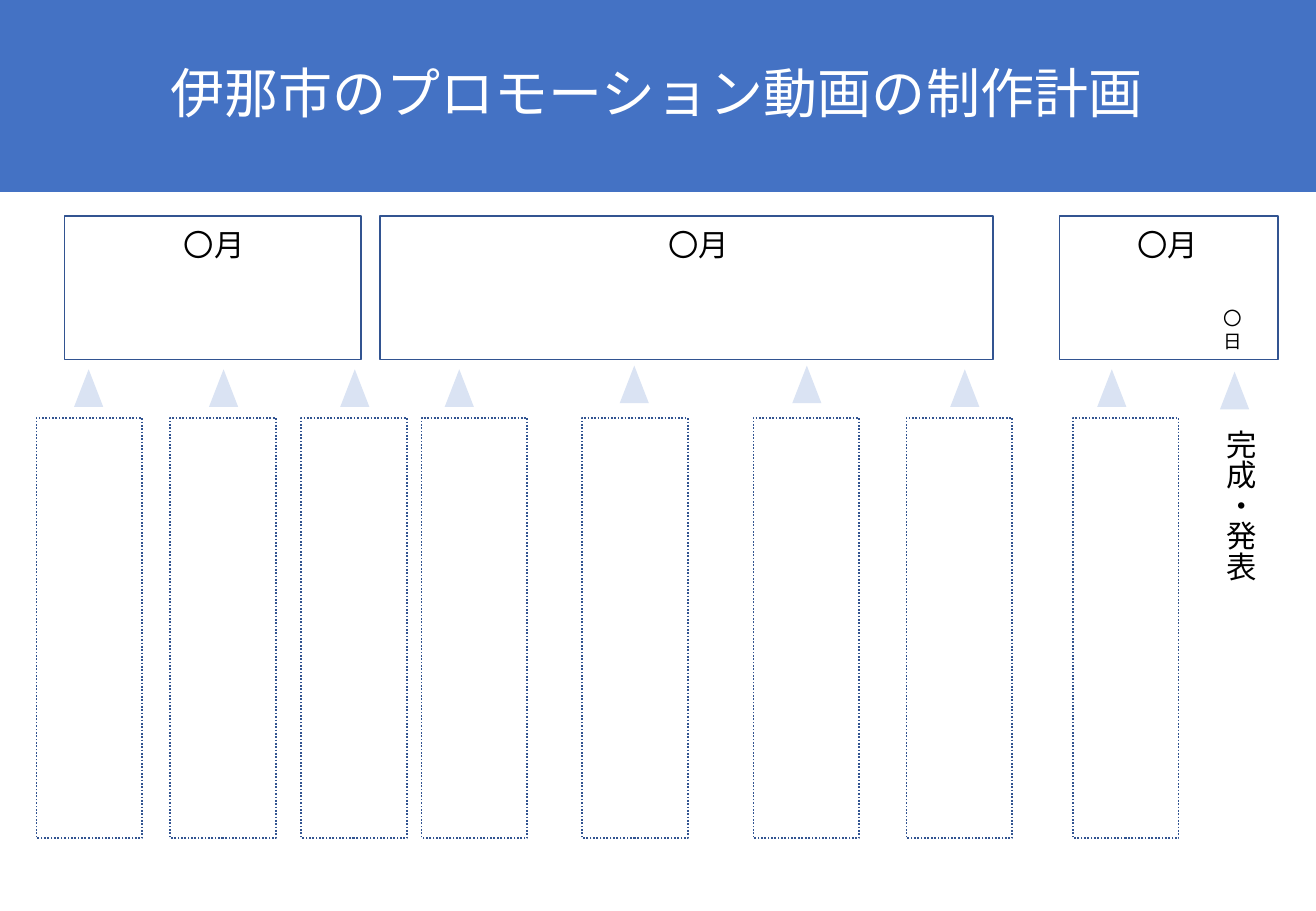
"""Build the one-page production schedule for a city promotion video."""
from dataclasses import dataclass

from lxml.etree import SubElement
from pptx import Presentation
from pptx.dml.color import RGBColor
from pptx.enum.dml import MSO_LINE
from pptx.enum.lang import MSO_LANGUAGE_ID
from pptx.enum.shapes import MSO_SHAPE
from pptx.enum.text import MSO_ANCHOR, MSO_AUTO_SIZE, PP_ALIGN
from pptx.oxml.ns import qn
from pptx.util import Emu, Pt


@dataclass(frozen=True)
class Theme:
    banner: str = "4472C4"
    outline: str = "325491"
    arrow: str = "DAE3F3"
    ink: str = "000000"
    paper: str = "FFFFFF"
    latin: str = "Calibri"
    japanese: str = "Noto Sans CJK JP"
    title_size: int = 32
    label_size: int = 18
    day_size: int = 11
    line_width: int = 1


THEME = Theme()
EMU_PER_PX = 9144
PAGE_WIDTH, PAGE_HEIGHT = 1083, 750
MONTH_TOP, MONTH_HEIGHT = 178, 118
STEP_TOP, STEP_WIDTH, STEP_HEIGHT = 344, 87, 346
ARROW_WIDTH, ARROW_HEIGHT = 24, 31

MONTHS = [(53, 244), (313, 504), (872, 180)]
STEP_LEFTS = [30, 140, 248, 347, 479, 620, 746, 883]
ARROWS = [
    (61, 304), (172, 304), (280, 304), (366, 304), (510, 301),
    (652, 301), (782, 304), (903, 304), (1004, 306),
]
MONTH_LABELS = [(136, 106, " 〇月"), (926, 71, "〇月"), (540, 71, "〇月")]


def px(*lengths):
    return [Emu(length * EMU_PER_PX) for length in lengths]


def add_block(page, kind, bounds, fill=None, line=None, dash=None):
    block = page.shapes.add_shape(kind, *px(*bounds))
    block.shadow.inherit = False
    if fill:
        block.fill.solid()
        block.fill.fore_color.rgb = RGBColor.from_string(fill)
    else:
        block.fill.background()
    if line:
        block.line.color.rgb = RGBColor.from_string(line)
        block.line.width = Pt(THEME.line_width)
        if dash:
            block.line.dash_style = dash
    else:
        block.line.fill.background()
    return block


def write_text(box, text, size=THEME.label_size, color=THEME.ink,
               font=THEME.latin, align=PP_ALIGN.LEFT, spacing=None):
    para = box.text_frame.paragraphs[0]
    para.alignment = align
    if spacing:
        para.line_spacing = spacing
    span = para.add_run()
    span.text = text
    span.font.size = Pt(size)
    span.font.color.rgb = RGBColor.from_string(color)
    span.font.name = font
    span.font.language_id = MSO_LANGUAGE_ID.JAPANESE
    SubElement(span.font._element, qn("a:ea"), typeface=THEME.japanese)


def add_label(page, bounds, text, wrap=False, vertical=False, **text_format):
    box = page.shapes.add_textbox(*px(*bounds))
    box.text_frame.word_wrap = wrap
    box.text_frame.auto_size = MSO_AUTO_SIZE.SHAPE_TO_FIT_TEXT
    if vertical:
        box.element.txBody.bodyPr.set("vert", "eaVert")
    write_text(box, text, **text_format)


def add_title(page, text):
    banner = add_block(page, MSO_SHAPE.RECTANGLE, (-2, 0, PAGE_WIDTH + 2, 158),
                       fill=THEME.banner)
    banner.text_frame.word_wrap = True
    banner.text_frame.vertical_anchor = MSO_ANCHOR.MIDDLE
    write_text(banner, text, size=THEME.title_size, color=THEME.paper,
               font=THEME.japanese, align=PP_ALIGN.CENTER, spacing=0.9)


def add_month(page, left, width):
    add_block(page, MSO_SHAPE.RECTANGLE, (left, MONTH_TOP, width, MONTH_HEIGHT),
              line=THEME.outline)


def add_arrow(page, left, top):
    add_block(page, MSO_SHAPE.ISOSCELES_TRIANGLE,
              (left, top, ARROW_WIDTH, ARROW_HEIGHT), fill=THEME.arrow)


def add_step(page, left):
    add_block(page, MSO_SHAPE.RECTANGLE,
              (left, STEP_TOP, STEP_WIDTH, STEP_HEIGHT),
              line=THEME.outline, dash=MSO_LINE.ROUND_DOT)


def main():
    deck = Presentation()
    deck.slide_width, deck.slide_height = px(PAGE_WIDTH, PAGE_HEIGHT)
    page = deck.slides.add_slide(deck.slide_layouts[6])

    add_title(page, "伊那市のプロモーション動画の制作計画")
    for left, width in MONTHS:
        add_month(page, left, width)
    for left, top in ARROWS:
        add_arrow(page, left, top)
    for left in STEP_LEFTS:
        add_step(page, left)
    for left, width, text in MONTH_LABELS:
        add_label(page, (left, 181, width, 40), text)
    add_label(page, (997, 248, 44, 48), "〇日", wrap=True, size=THEME.day_size)
    add_label(page, (991, STEP_TOP, 50, 181), "完成・発表",
              wrap=True, vertical=True)

    deck.save("out.pptx")


if __name__ == "__main__":
    main()
